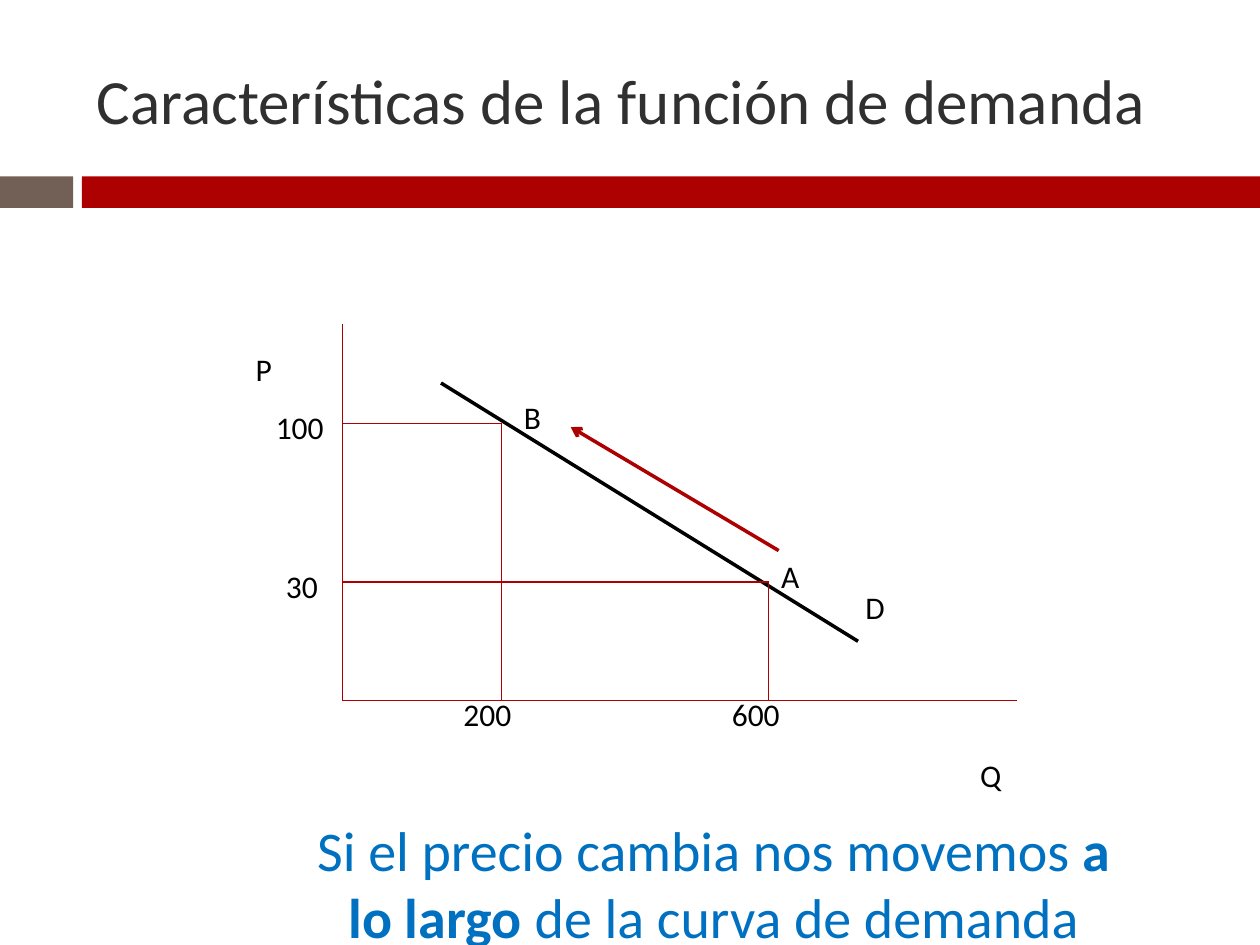
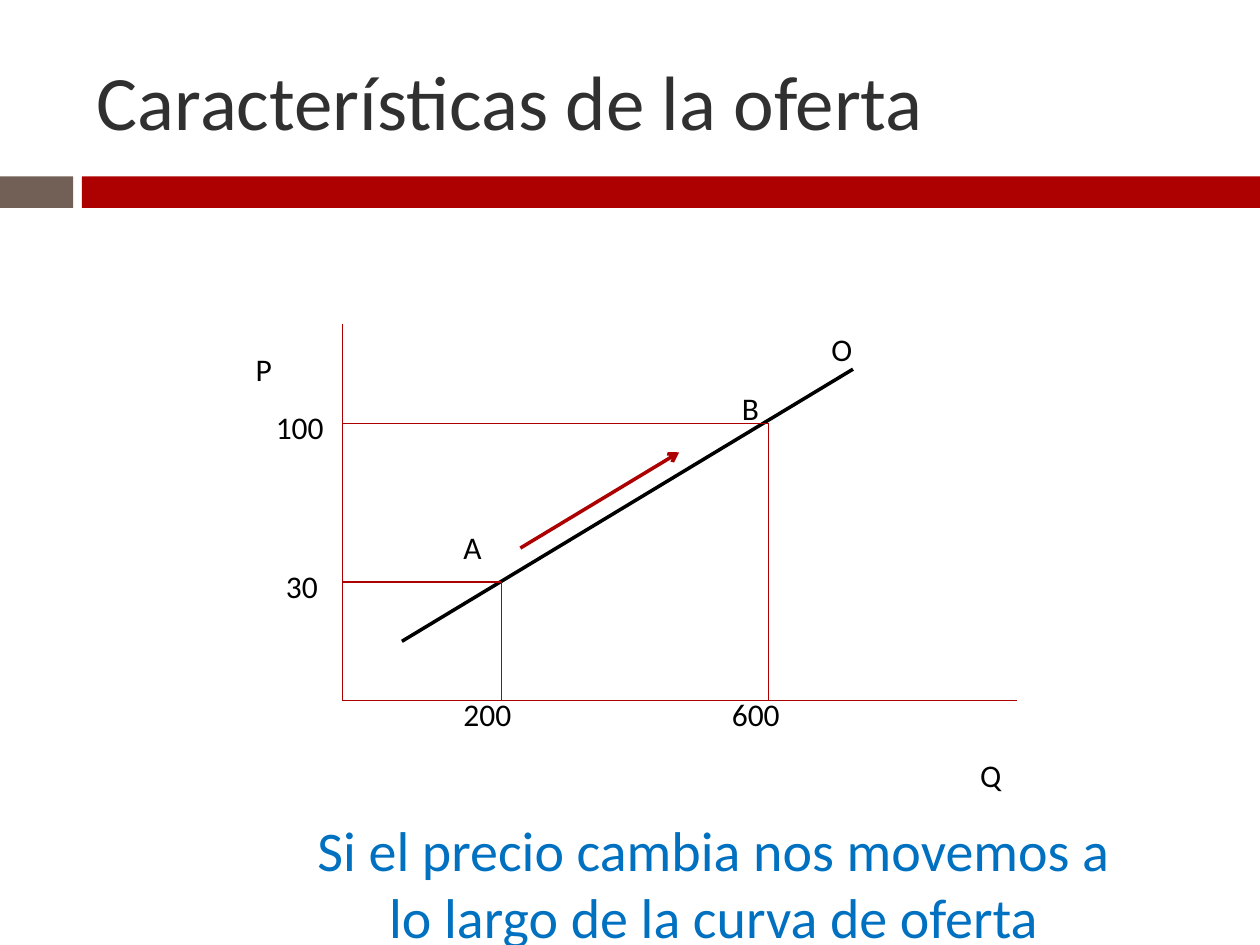
from lxml import etree
from pptx import Presentation
from pptx.dml.color import RGBColor
from pptx.enum.shapes import MSO_CONNECTOR, MSO_SHAPE
from pptx.enum.text import MSO_ANCHOR, PP_ALIGN
from pptx.oxml.ns import qn
from pptx.util import Inches, Pt

STRAIGHT, RECT = MSO_CONNECTOR.STRAIGHT, MSO_SHAPE.RECTANGLE
TOP, MIDDLE = MSO_ANCHOR.TOP, MSO_ANCHOR.MIDDLE
LEFT, CENTER = PP_ALIGN.LEFT, PP_ALIGN.CENTER

WIDE, HIGH = 10, 7.5
FONT = "Calibri"
COLORS = {"red": "AD0101", "brown": "726056", "title": "303030",
          "black": "000000", "blue": "0070C0"}

# Graph frame: origin, axis ends and where each value falls
ORIGIN = (2.72, 5.56)
AXES = [(2.72, 2.57), (8.07, 5.56)]
QTY = {200: 3.98, 600: 6.1}
PRICE = {100: 3.36, 30: 4.62}
LABEL = (0.79, 0.4)
NAMES = [("P", 1.93, 2.73), ("Q", 7.68, 5.95)]
TICKS = [("100", 2.09, PRICE[100] - 0.17), ("30", 2.17, PRICE[30] - 0.17),
         ("200", QTY[200] - 0.4, 5.47), ("600", QTY[600] - 0.39, 5.47)]

SLIDES = [
    {"title": "Características de la función de demanda", "size": 36,
     "curve": [(3.5, 3.04), (6.81, 5.09)],
     "arrow": [(6.18, 4.37), (4.53, 3.39)],
     "points": [(200, 100), (600, 30)],
     "labels": [("D", 6.77, 4.62), ("B", 4.06, 3.11), ("A", 6.1, 4.37)],
     "note": [("Si el precio cambia nos movemos ", False),
              ("a lo largo ", True), ("de la curva de demanda", False)]},
    {"title": "Características de la oferta", "size": 44,
     "curve": [(3.19, 5.09), (6.77, 2.93)],
     "arrow": [(4.13, 4.35), (5.39, 3.59)],
     "points": [(200, 30), (600, 100)],
     "labels": [("O", 6.5, 2.57), ("B", 5.79, 3.04), ("A", 3.58, 4.14)],
     "note": [("Si el precio cambia nos movemos a lo largo de la curva "
               "de oferta", False)]},
]


def rgb(name):
    return RGBColor.from_string(COLORS[name])


def add_bar(slide, left, width, color):
    bar = slide.shapes.add_shape(RECT, Inches(left), Inches(1.4),
                                 Inches(width), Inches(0.25))
    bar.shadow.inherit = False
    bar.fill.solid()
    bar.fill.fore_color.rgb = rgb(color)
    bar.line.fill.background()


def add_text(slide, box, runs, size=18, color="black", align=LEFT, anchor=TOP):
    """Place a text box; runs is a list of (text, bold)."""
    frame = slide.shapes.add_textbox(*map(Inches, box)).text_frame
    for key, value in {"word_wrap": True, "vertical_anchor": anchor}.items():
        setattr(frame, key, value)
    para = frame.paragraphs[0]
    para.alignment = align
    for text, bold in runs:
        run = para.add_run()
        run.text = text
        for key, value in {"name": FONT, "size": Pt(size), "bold": bold}.items():
            setattr(run.font, key, value)
        run.font.color.rgb = rgb(color)


def add_line(slide, start, end, color="red", width=0.79, arrow=False):
    line = slide.shapes.add_connector(STRAIGHT, *map(Inches, (*start, *end)))
    line.line.color.rgb = rgb(color)
    line.line.width = Pt(width)
    props = line._element.spPr
    if arrow:
        etree.SubElement(props.find(qn("a:ln")), qn("a:tailEnd"), type="arrow")
    etree.SubElement(props, qn("a:effectLst"))


def add_graph(slide, data):
    for end in AXES:
        add_line(slide, ORIGIN, end)
    add_line(slide, *data["curve"], color="black", width=2)
    for qty, price in data["points"]:
        x, y = QTY[qty], PRICE[price]
        add_line(slide, (ORIGIN[0], y), (x, y))
        add_line(slide, (x, y), (x, ORIGIN[1]))
    for text, x, y in NAMES + TICKS + data["labels"]:
        add_text(slide, (x, y, *LABEL), [(text, False)])
    add_line(slide, *data["arrow"], width=2, arrow=True)


def add_page(deck, data):
    slide = deck.slides.add_slide(deck.slide_layouts[6])
    add_bar(slide, 0, 0.58, "brown")
    add_bar(slide, 0.65, WIDE - 0.65, "red")
    add_text(slide, (0.67, 0.25, 8.92, 1.08), [(data["title"], False)],
             data["size"], "title", anchor=MIDDLE)
    add_graph(slide, data)
    add_text(slide, (2.24, 6.42, 6.85, 1.18), data["note"], 32, "blue", CENTER)


def main():
    deck = Presentation()
    deck.slide_width, deck.slide_height = Inches(WIDE), Inches(HIGH)
    for data in SLIDES:
        add_page(deck, data)
    deck.save("out.pptx")


if __name__ == "__main__":
    main()
